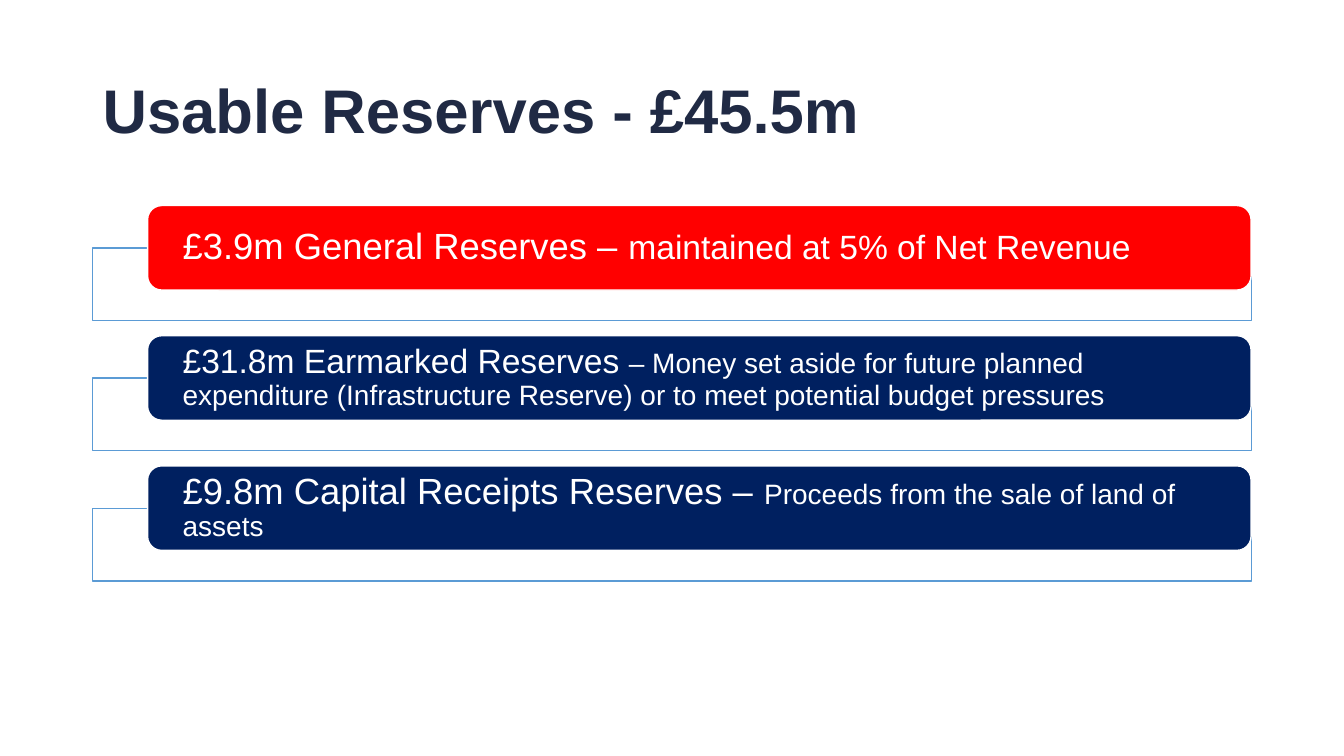
from lxml.etree import SubElement
from pptx import Presentation
from pptx.dml.color import RGBColor
from pptx.enum.shapes import MSO_SHAPE as Shape
from pptx.enum.text import MSO_ANCHOR as Anchor, MSO_AUTO_SIZE as AutoSize, PP_ALIGN as Align
from pptx.oxml.ns import qn
from pptx.util import Cm, Pt

NAVY_TEXT = RGBColor(0x20, 0x2A, 0x44)
NAVY = RGBColor(0x00, 0x20, 0x60)
RED = RGBColor(0xFF, 0x00, 0x00)
BLUE = RGBColor(0x5B, 0x9B, 0xD5)
WHITE = RGBColor(0xFF, 0xFF, 0xFF)

LEFT, WIDTH = 2.33, 29.21
FIRST_BAR_TOP, ROW_STEP = 5.18, 3.28


def add_run(paragraph, text, size, color=WHITE, bold=False):
    run = paragraph.add_run()
    run.text = text
    run.font.name = "Arial"
    run.font.size = Pt(size)
    run.font.bold = bold
    run.font.color.rgb = color


def add_box(kind, left, top, width, height, fill, line):
    shape = slide.shapes.add_shape(kind, Cm(left), Cm(top), Cm(width), Cm(height))
    shape.shadow.inherit = False
    shape.fill.solid()
    shape.fill.fore_color.rgb = fill
    shape.line.color.rgb = line
    shape.line.width = Pt(1)
    return shape


presentation = Presentation()
presentation.slide_width = Cm(33.87)
presentation.slide_height = Cm(19.05)
slide = presentation.slides.add_slide(presentation.slide_layouts[5])

# Title
title = slide.shapes.title
title.left, title.top, title.width, title.height = Cm(LEFT), Cm(1.01), Cm(WIDTH), Cm(3.68)
title.text_frame.auto_size = AutoSize.NONE
title.text_frame.vertical_anchor = Anchor.MIDDLE
paragraph = title.text_frame.paragraphs[0]
paragraph.alignment = Align.LEFT
paragraph.line_spacing = 0.9
add_run(paragraph, "Usable Reserves - £45.5m", 44, color=NAVY_TEXT, bold=True)

# Reserves: bar colour, then each text part with its size
reserves = [
    (RED, [("£3.9m General Reserves – ", 26),
           ("maintained at 5% of Net Revenue", 24)]),
    (NAVY, [("£31.8m Earmarked Reserves ", 24),
            ("– Money set aside for future planned expenditure "
             "(Infrastructure Reserve) or to meet potential budget pressures", 20)]),
    (NAVY, [("£9.8m Capital Receipts Reserves – ", 26),
            ("Proceeds from the sale of land of assets", 20)]),
]

for row, (bar_color, parts) in enumerate(reserves):
    bar_top = FIRST_BAR_TOP + row * ROW_STEP

    # Outlined frame behind the bar, 90% opaque
    frame = add_box(Shape.RECTANGLE, LEFT, bar_top + 1.07, WIDTH, 1.83, WHITE, BLUE)
    frame_color = frame.fill._xPr.find(qn("a:solidFill"))[0]
    SubElement(frame_color, qn("a:alpha"), val="90000")

    # Rounded bar with its text
    bar = add_box(Shape.ROUNDED_RECTANGLE, 3.72, bar_top, 27.81, 2.13, bar_color, WHITE)
    text_frame = bar.text_frame
    text_frame.word_wrap = True
    text_frame.vertical_anchor = Anchor.MIDDLE
    text_frame.margin_left = text_frame.margin_right = Cm(0.78)
    text_frame.margin_top = text_frame.margin_bottom = 0
    paragraph = text_frame.paragraphs[0]
    paragraph.alignment = Align.LEFT
    paragraph.line_spacing = 0.9
    for text, size in parts:
        add_run(paragraph, text, size)

presentation.save("out.pptx")
